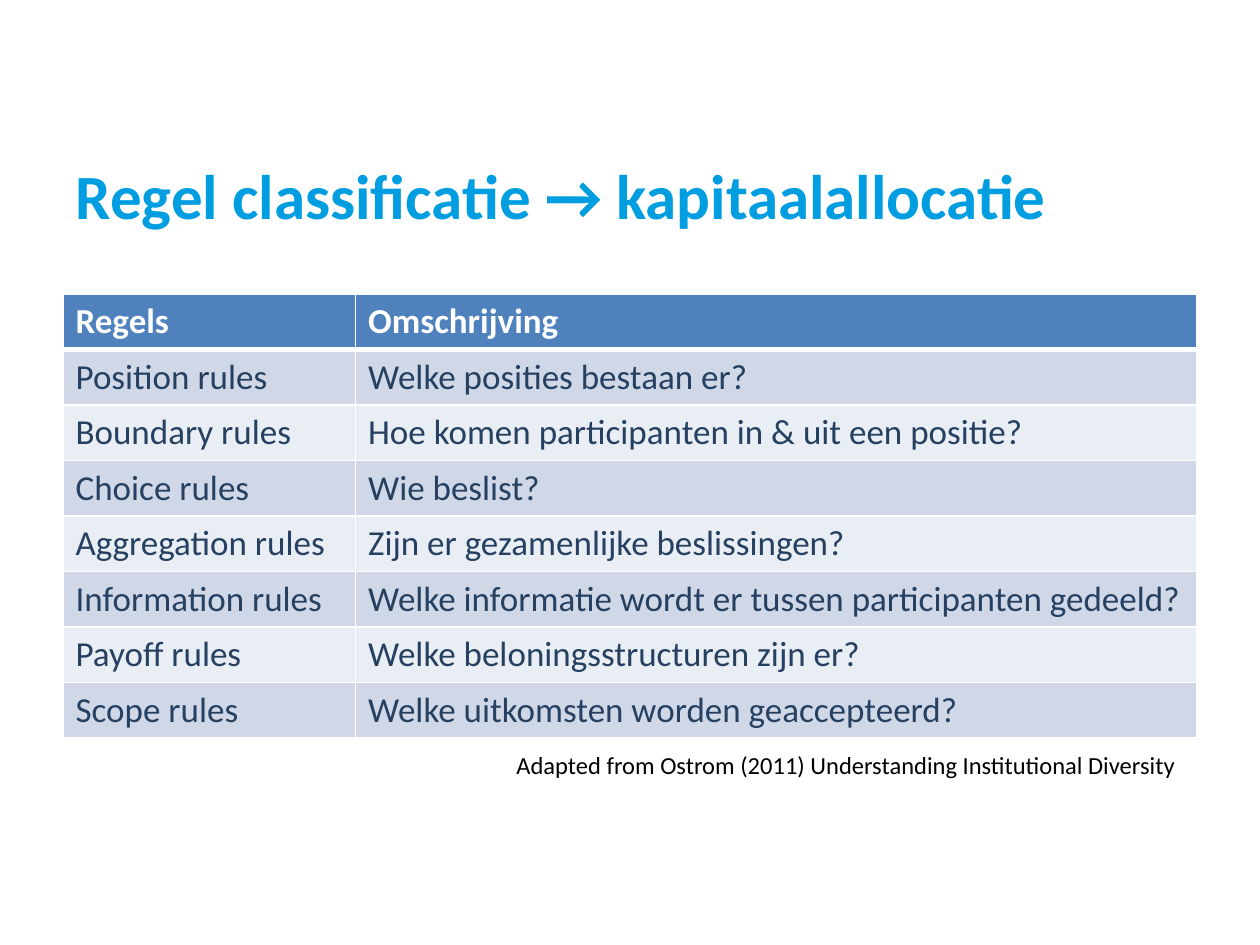
from lxml import etree
from pptx import Presentation
from pptx.dml.color import RGBColor
from pptx.enum.text import MSO_ANCHOR, PP_ALIGN
from pptx.oxml.ns import qn
from pptx.util import Inches, Pt

LEFT, MIDDLE = PP_ALIGN.LEFT, MSO_ANCHOR.MIDDLE
TITLE_ONLY = 5
WIDTH, HEIGHT = 10, 7.5
FONT = "Calibri"
COLORS = {
    "title": "009EE0",
    "header": "4F81BD",
    "bands": ("D0D8E8", "E9EDF4"),
    "rule": "254061",
    "white": "FFFFFF",
    "source": "000000",
}
RULES = [
    ("Regels", "Omschrijving"),
    ("Position rules", "Welke posities bestaan er?"),
    ("Boundary rules", "Hoe komen participanten in & uit een positie?"),
    ("Choice rules", "Wie beslist?"),
    ("Aggregation rules", "Zijn er gezamenlijke beslissingen?"),
    ("Information rules", "Welke informatie wordt er tussen participanten gedeeld?"),
    ("Payoff rules", "Welke beloningsstructuren zijn er?"),
    ("Scope rules", "Welke uitkomsten worden geaccepteerd?"),
]


def write(frame, text, size=20, color="source", bold=False):
    paragraph = frame.paragraphs[0]
    paragraph.alignment = LEFT
    run = paragraph.add_run()
    run.text = text
    run.font.name = FONT
    run.font.size = Pt(size)
    run.font.bold = bold
    run.font.color.rgb = RGBColor.from_string(COLORS[color])


def add_borders(cell, **widths):
    """Draw white borders; widths in points per side: L, R, T, B."""
    properties = cell._tc.get_or_add_tcPr()
    for side, width in widths.items():
        line = etree.SubElement(properties, qn(f"a:ln{side}"), w=str(Pt(width)))
        fill = etree.SubElement(line, qn("a:solidFill"))
        etree.SubElement(fill, qn("a:srgbClr"), val=COLORS["white"])


class RuleSlide:
    def __init__(self, presentation):
        layout = presentation.slide_layouts[TITLE_ONLY]
        self.slide = presentation.slides.add_slide(layout)
        self.width = presentation.slide_width
        self.height = presentation.slide_height

    def area(self, left, top, width, height):
        """Turn shares of the slide's size into lengths."""
        return (int(left * self.width), int(top * self.height),
                int(width * self.width), int(height * self.height))

    def title(self, text, *shares):
        title = self.slide.shapes.title
        title.left, title.top, title.width, title.height = self.area(*shares)
        title.text_frame.vertical_anchor = MIDDLE
        write(title.text_frame, text, size=36, color="title", bold=True)

    def table(self, rows, column_shares, *shares):
        area = self.area(*shares)
        table = self.slide.shapes.add_table(
            len(rows), len(column_shares), *area).table
        for column, share in zip(table.columns, column_shares):
            column.width = int(share * area[2])
        for r, texts in enumerate(rows):
            header = r == 0
            fill = COLORS["header"] if header else COLORS["bands"][(r - 1) % 2]
            for c, text in enumerate(texts):
                cell = table.cell(r, c)
                add_borders(cell, L=1, R=1, T=3 if r == 1 else 1,
                            B=3 if header else 1)
                cell.fill.solid()
                cell.fill.fore_color.rgb = RGBColor.from_string(fill)
                write(cell.text_frame, text, bold=header,
                      color="white" if header else "rule")

    def source(self, text, *shares):
        box = self.slide.shapes.add_textbox(*self.area(*shares))
        box.text_frame.word_wrap = True
        write(box.text_frame, text, size=14)


def main():
    presentation = Presentation()
    presentation.slide_width = Inches(WIDTH)
    presentation.slide_height = Inches(HEIGHT)
    slide = RuleSlide(presentation)

    # Heading
    slide.title("Regel classificatie → kapitaalallocatie", 0.05, 0.153, 0.9, 0.105)

    # Classification of the rules
    slide.table(RULES, (0.258, 0.742), 0.05, 0.311, 0.9, 0.47)

    # Source
    slide.source("Adapted from Ostrom (2011) Understanding Institutional Diversity",
                 0.4, 0.787, 0.55, 0.045)

    presentation.save("out.pptx")


if __name__ == "__main__":
    main()
